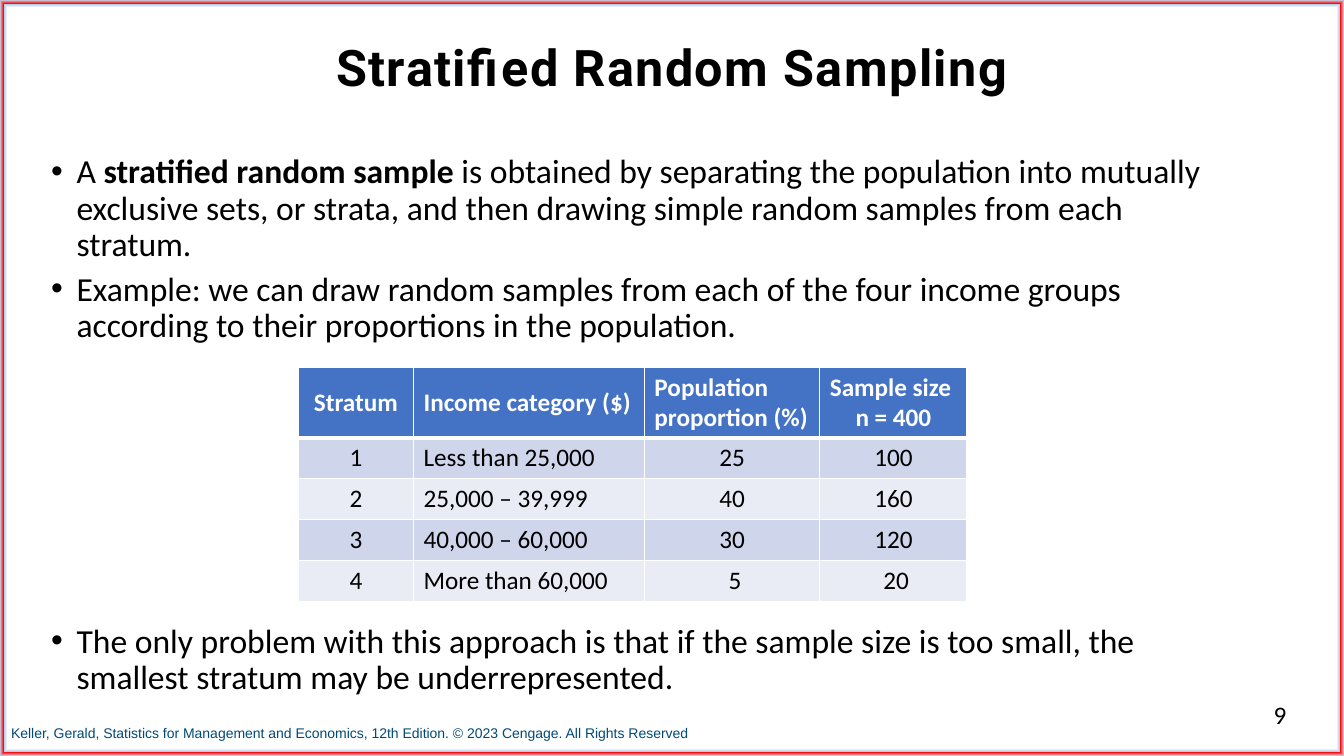
from pptx import Presentation
from pptx.dml.color import RGBColor as Rgb
from pptx.enum.text import MSO_ANCHOR as Anchor, MSO_AUTO_SIZE as Auto, PP_ALIGN as Align
from pptx.oxml import parse_xml
from pptx.oxml.ns import nsdecls
from pptx.util import Cm, Pt
from lxml.etree import SubElement

INK = {"text": "000000", "note": "004A78", "head": "4472C4", "odd": "CFD5EA",
       "even": "E9EBF5", "white": "FFFFFF", "rim": "ABC0E4", "red": "FF0000",
       "edge": "C7D5ED"}
NS = "{http://schemas.openxmlformats.org/drawingml/2006/main}"


def write(par, text, size=18, font="Calibri", ink="text", bold=False, align=None):
    """Add a formatted run to a paragraph and return the run."""
    run = par.add_run()
    run.text = text
    run.font.size, run.font.name, run.font.bold = Pt(size), font, bold
    run.font.color.rgb = Rgb.from_string(INK[ink])
    if align is not None:
        par.alignment = align
    return run


def add_box(left, top, width, height, wrap=True):
    frame = slide.shapes.add_textbox(Cm(left), Cm(top), Cm(width), Cm(height)).text_frame
    frame.word_wrap = wrap
    return frame


prs = Presentation()
prs.slide_width, prs.slide_height = Cm(33.87), Cm(19.05)
slide = prs.slides.add_slide(prs.slide_layouts[5])

# Background: white with a thin coloured rim
stops = "".join(f'<a:gs pos="{pos}000"><a:srgbClr val="{INK[ink]}"/></a:gs>'
                for pos, ink in [(98, "white"), (99, "rim"), (99, "red"), (100, "edge")])
slide.element.cSld.insert(0, parse_xml(
    f'<p:bg {nsdecls("p", "a")}><p:bgPr><a:gradFill rotWithShape="1"><a:gsLst>{stops}</a:gsLst>'
    '<a:path path="shape"><a:fillToRect l="50000" t="50000" r="50000" b="50000"/></a:path>'
    '</a:gradFill><a:effectLst/></p:bgPr></p:bg>'))

# Title
title = slide.shapes.title
title.left, title.top, title.width, title.height = Cm(0.48), Cm(0.79), Cm(32.92), Cm(1.8)
frame = title.text_frame
frame.auto_size, frame.vertical_anchor = Auto.NONE, Anchor.TOP
run = write(frame.paragraphs[0], "Stratified Random Sampling", size=36, font="Roboto",
            bold=True, align=Align.CENTER)
run.font._element.set("spc", "100")

# Bullets above and below the table; each bullet is a list of (text, bold)
above = [
    [("A ", False), ("stratified random sample ", True),
     ("is obtained by separating the population into mutually exclusive sets, or strata, "
      "and then drawing simple random samples from each stratum.", False)],
    [("Example: we can draw random samples from each of the four income groups "
      "according to their proportions in the population.", False)],
]
below = [[("The only problem with this approach is that if the sample size is too small, "
           "the smallest stratum may be underrepresented.", False)]]
for top, height, bullets in [(3.78, 5.1), (15.6, 2.2)] and [(3.78, 5.1, above), (15.6, 2.2, below)]:
    frame = add_box(1.04, top, 29.77, height)
    for i, parts in enumerate(bullets):
        par = frame.add_paragraph() if i else frame.paragraphs[0]
        par.line_spacing = 0.9
        if i:
            par.space_before = Pt(6)
        props = par._p.get_or_add_pPr()
        props.set("marL", str(Cm(0.64)))
        props.set("indent", str(-Cm(0.64)))
        SubElement(props, NS + "buFont", typeface="Arial")
        SubElement(props, NS + "buChar", char="•")
        for text, bold in parts:
            write(par, text, size=24, bold=bold)

# Table of strata
rows = [
    ["Stratum", "Income category ($)", "Population proportion (%)", "Sample size\nn = 400"],
    ["1", "Less than 25,000", "25", "100"],
    ["2", "25,000 – 39,999", "40", "160"],
    ["3", "40,000 – 60,000", "30", "120"],
    ["4", "More than 60,000", " 5", " 20"],
]
widths = [2.9, 5.82, 4.42, 3.71]
heights = [1.76] + [1.03] * 4
table = slide.shapes.add_table(5, 4, Cm(7.52), Cm(9.25), Cm(sum(widths)),
                               Cm(sum(heights))).table
for col, width in zip(table.columns, widths):
    col.width = Cm(width)
for r, (row, height) in enumerate(zip(rows, heights)):
    table.rows[r].height = Cm(height)
    for c, text in enumerate(row):
        cell = table.cell(r, c)
        props = cell._tc.get_or_add_tcPr()
        for side in "LRTB":
            thick = (r, side) in [(0, "B"), (1, "T")]
            line = SubElement(props, NS + "ln" + side, w=str(Pt(3 if thick else 1)))
            SubElement(SubElement(line, NS + "solidFill"), NS + "srgbClr", val=INK["white"])
        cell.fill.solid()
        fill = "head" if r == 0 else "odd" if r % 2 else "even"
        cell.fill.fore_color.rgb = Rgb.from_string(INK[fill])
        if r == 0 and c < 2:
            cell.vertical_anchor = Anchor.MIDDLE
        for i, line in enumerate(text.split("\n")):
            par = cell.text_frame.add_paragraph() if i else cell.text_frame.paragraphs[0]
            left = c == 1 or (r == 0 and c > 1 and i == 0)
            write(par, line, ink="text" if r else "white", bold=r == 0,
                  align=Align.LEFT if left else Align.CENTER)

# Slide number and credit line
write(add_box(31.85, 17.5, 1.27, 1.02, wrap=False).paragraphs[0], "9")
frame = add_box(0.28, 18.24, 24.87, 0.56)
frame.margin_left = frame.margin_top = frame.margin_right = 0
frame.vertical_anchor = Anchor.BOTTOM
write(frame.paragraphs[0], "Keller, Gerald, Statistics for Management and Economics, 12th Edition. "
      "© 2023 Cengage. All Rights Reserved", size=10, font="Arial", ink="note")

prs.save("out.pptx")
